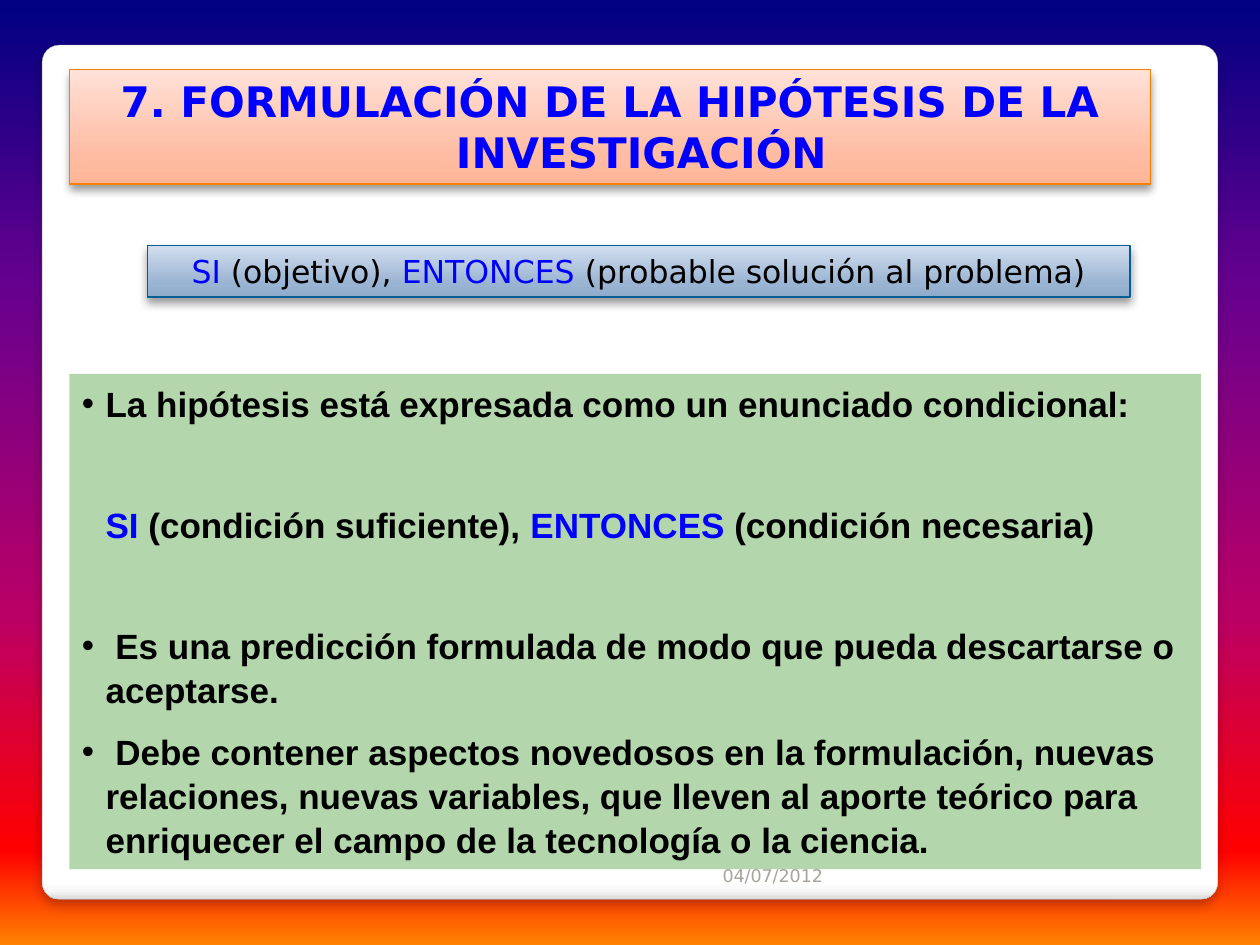
"""Build a slide on formulating the research hypothesis."""
from lxml import etree
from pptx import Presentation
from pptx.dml.color import RGBColor
from pptx.enum.shapes import MSO_SHAPE
from pptx.enum.text import MSO_ANCHOR, PP_ALIGN
from pptx.oxml.ns import qn
from pptx.util import Cm, Pt

RECTANGLE, ROUNDED = MSO_SHAPE.RECTANGLE, MSO_SHAPE.ROUNDED_RECTANGLE
TOP, BOTTOM = MSO_ANCHOR.TOP, MSO_ANCHOR.BOTTOM
LEFT, CENTER, RIGHT = PP_ALIGN.LEFT, PP_ALIGN.CENTER, PP_ALIGN.RIGHT
BLUE, BLACK, GREY = "0000FF", "000000", "A8A49B"
DOWN, UP = 90, 270

SKY = [(0, "000082"), (30, "66008F"), (65, "BA0066"), (90, "FF0000"), (100, "FF8200")]
PANEL = [(0, "FFFFFF"), (98, "FFFFFF"), (99, "F7F7F7"), (100, "DADADA")]
ORANGE = [(0, "FFB598"), (25, "FFBCA2"), (100, "FFE1D8")]
STEEL = [(0, "90ABCB"), (25, "99B3D2"), (100, "D1DEEE")]
SOFT_SHADOW = {"alpha": 25, "blur": 6, "distance": 4}
STRONG_SHADOW = {"alpha": 40, "blur": 5.2, "distance": 3}

BODY = [
    (True, 0, [("La hipótesis está expresada como un enunciado condicional:", BLACK)]),
    (False, 44, [("SI", BLUE), (" (condición suficiente), ", BLACK),
                 ("ENTONCES", BLUE), (" (condición necesaria)", BLACK)]),
    (True, 44, [(" Es una predicción formulada de modo que pueda descartarse o aceptarse.", BLACK)]),
    (True, 10, [(" Debe contener aspectos novedosos en la formulación, nuevas relaciones, "
                 "nuevas variables, que lleven al aporte teórico para enriquecer el campo "
                 "de la tecnología o la ciencia.", BLACK)]),
]
TITLE = [(False, 0, [("7. FORMULACIÓN DE LA HIPÓTESIS DE LA INVESTIGACIÓN", BLUE)])]
FORMULA = [(False, 0, [("SI", BLUE), (" (objetivo), ", BLACK), ("ENTONCES", BLUE),
                       (" (probable solución al problema)", BLACK)])]
DATE = [(False, 0, [("04/07/2012", GREY)])]


def color(code):
    return RGBColor.from_string(code)


def add_gradient(owner, fill, stops, angle):
    fill.background()
    empty = owner.element.find(".//" + qn("a:noFill"))
    gradient = etree.Element(qn("a:gradFill"), rotWithShape="1")
    stop_list = etree.SubElement(gradient, qn("a:gsLst"))
    for place, code in stops:
        stop = etree.SubElement(stop_list, qn("a:gs"), pos=str(place * 1000))
        etree.SubElement(stop, qn("a:srgbClr"), val=code)
    etree.SubElement(gradient, qn("a:lin"), ang=str(angle * 60000), scaled="0")
    empty.getparent().replace(empty, gradient)


def add_shadow(shape, alpha, blur, distance):
    effects = shape.element.find(".//" + qn("a:effectLst"))
    shadow = etree.SubElement(effects, qn("a:outerShdw"), blurRad=str(Pt(blur)),
                              dist=str(Pt(distance)), dir="5400000",
                              algn="t", rotWithShape="0")
    tint = etree.SubElement(shadow, qn("a:srgbClr"), val=BLACK)
    etree.SubElement(tint, qn("a:alpha"), val=str(alpha * 1000))


def add_box(page, kind, place, fill, angle=UP, line=None, shadow=None):
    box = page.shapes.add_shape(kind, *map(Cm, place))
    box.shadow.inherit = False
    if isinstance(fill, list):
        add_gradient(box, box.fill, fill, angle)
    else:
        box.fill.solid()
        box.fill.fore_color.rgb = color(fill)
    if line:
        box.line.color.rgb = color(line[0])
        box.line.width = Pt(line[1])
    else:
        box.line.fill.background()
    if shadow:
        add_shadow(box, **shadow)
    return box


def write(box, paragraphs, font, align=LEFT, anchor=TOP, hanging=0, spacing=None):
    frame = box.text_frame
    frame.word_wrap = True
    frame.vertical_anchor = anchor
    for index, (bullet, gap, spans) in enumerate(paragraphs):
        para = frame.add_paragraph() if index else frame.paragraphs[0]
        layout = {"alignment": align, "space_before": Pt(gap), "line_spacing": spacing}
        for name, value in layout.items():
            setattr(para, name, value)
        properties = para._p.get_or_add_pPr()
        properties.set("marL", str(Cm(hanging)))
        if bullet or align == CENTER:
            properties.set("indent", str(-Cm(hanging)))
        if bullet:
            etree.SubElement(properties, qn("a:buFont"), typeface="Arial")
            etree.SubElement(properties, qn("a:buChar"), char="•")
        for text, code in spans:
            span = para.add_run()
            span.text = text
            span.font.color.rgb = color(code)
            for name, value in font.items():
                setattr(span.font, name, value)


def main():
    deck = Presentation()
    deck.slide_width, deck.slide_height = Cm(25.4), Cm(19.05)
    page = deck.slides.add_slide(deck.slide_layouts[6])
    add_gradient(page, page.background.fill, SKY, DOWN)

    panel = add_box(page, ROUNDED, (0.85, 0.91, 23.7, 17.22), PANEL, DOWN,
                    ("A4A4A4", 0.16), SOFT_SHADOW)
    panel.adjustments[0] = 0.02

    body = add_box(page, RECTANGLE, (1.4, 7.54, 22.81, 9.98), "B3D6AC")
    write(body, BODY, {"name": "Arial", "size": Pt(20), "bold": True},
          hanging=0.48, spacing=1.05)

    title = add_box(page, RECTANGLE, (1.4, 1.4, 21.79, 2.31), ORANGE,
                    line=("F97F00", 0.75), shadow=STRONG_SHADOW)
    write(title, TITLE, {"name": "DejaVu Sans", "size": Pt(24), "bold": True},
          CENTER, hanging=1.27)

    formula = add_box(page, RECTANGLE, (2.97, 4.95, 19.81, 1.04), STEEL,
                      line=("035E94", 0.75), shadow=STRONG_SHADOW)
    write(formula, FORMULA, {"name": "DejaVu Sans", "size": Pt(18)}, CENTER)

    date = page.shapes.add_textbox(*map(Cm, (10.49, 16.97, 6.35, 1.02)))
    write(date, DATE, {"name": "DejaVu Sans", "size": Pt(10)}, RIGHT, BOTTOM)
    deck.save("out.pptx")


if __name__ == "__main__":
    main()
